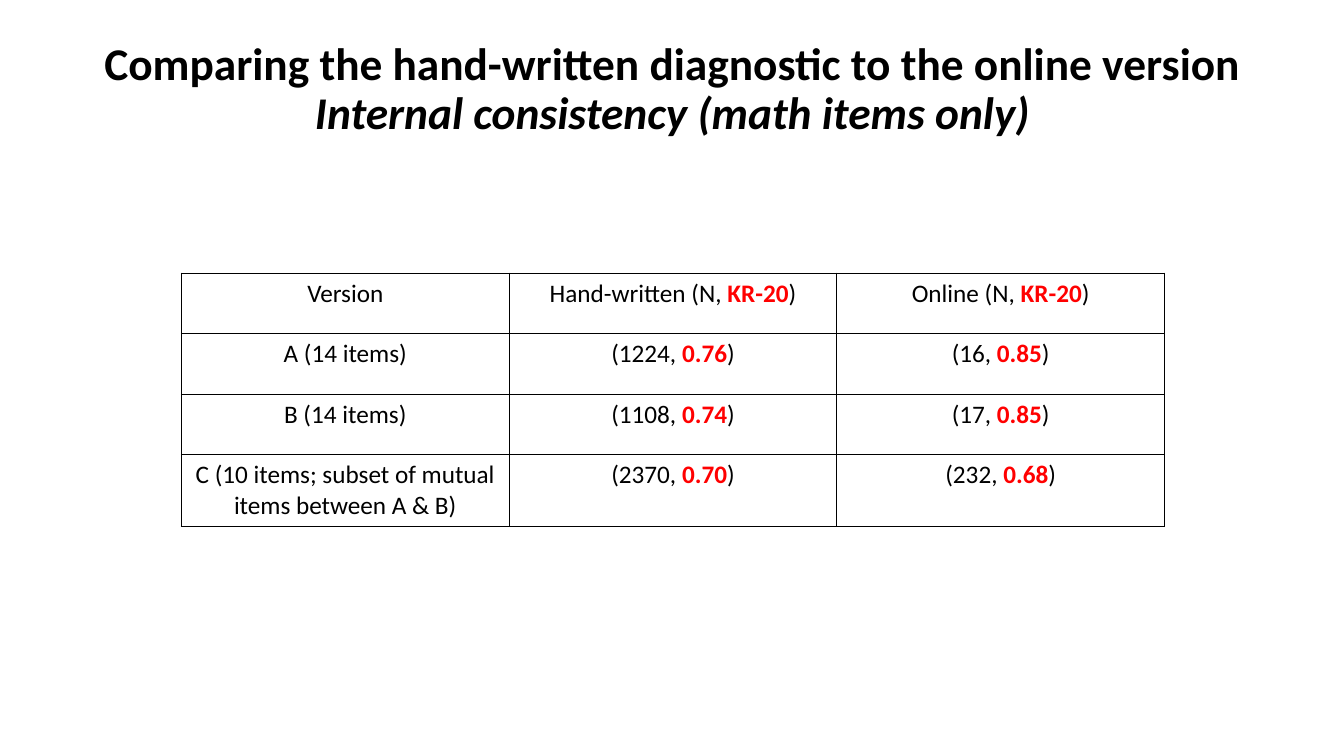
from dataclasses import dataclass

from lxml import etree
from pptx import Presentation
from pptx import util as u
from pptx.dml import color
from pptx.enum import text
from pptx.oxml import ns

WIDTH, HEIGHT = u.Inches(13.33), u.Inches(7.5)


@dataclass(frozen=True)
class Theme:
    font: str = "Calibri"
    ink: str = "000000"
    accent: str = "FF0000"
    paper: str = "FFFFFF"
    title_size: float = 32.4
    table_size: float = 18
    border: float = 1


THEME = Theme()

TITLE_LINES = [
    ("Comparing the hand-written diagnostic to the online version", False),
    ("Internal consistency (math items only)", True),
]
# Version, then (lead, highlighted KR-20) for hand-written and online
CONSISTENCY = [
    ("Version", ("Hand-written (N, ", "KR-20"), ("Online (N, ", "KR-20")),
    ("A (14 items)", ("(1224, ", "0.76"), ("(16, ", "0.85")),
    ("B (14 items)", ("(1108, ", "0.74"), ("(17, ", "0.85")),
    ("C (10 items; subset of mutual items between A & B)",
     ("(2370, ", "0.70"), ("(232, ", "0.68")),
]


def place(shape, left, top, width, height):
    """Position a shape in inches."""
    box = {"left": left, "top": top, "width": width, "height": height}
    for name, value in box.items():
        setattr(shape, name, u.Inches(value))


def add_run(paragraph, words, size, ink=THEME.ink, bold=False, italic=False):
    run = paragraph.add_run()
    run.text = words
    formats = {"name": THEME.font, "size": u.Pt(size), "bold": bold, "italic": italic}
    for name, value in formats.items():
        setattr(run.font, name, value)
    run.font.color.rgb = color.RGBColor.from_string(ink)


def fill_title(slide):
    title = slide.shapes.title
    place(title, 0.92, 0.17, 11.5, 1.45)
    frame = title.text_frame
    formats = {"word_wrap": True, "auto_size": text.MSO_AUTO_SIZE.NONE,
               "vertical_anchor": text.MSO_ANCHOR.MIDDLE}
    for name, value in formats.items():
        setattr(frame, name, value)
    paragraph = frame.paragraphs[0]
    paragraph.alignment = text.PP_ALIGN.CENTER
    paragraph.line_spacing = 0.9
    for index, (words, italic) in enumerate(TITLE_LINES):
        if index:
            paragraph.add_line_break()
        add_run(paragraph, words, THEME.title_size, bold=True, italic=italic)


def add_borders(cell):
    """Draw all four cell edges, ahead of the fill as the schema requires."""
    properties = cell._tc.get_or_add_tcPr()
    for index, edge in enumerate(("a:lnL", "a:lnR", "a:lnT", "a:lnB")):
        line = etree.Element(ns.qn(edge), w=str(u.Pt(THEME.border)))
        fill = etree.SubElement(line, ns.qn("a:solidFill"))
        etree.SubElement(fill, ns.qn("a:srgbClr"), val=THEME.ink)
        properties.insert(index, line)


def fill_cell(cell, content):
    cell.fill.solid()
    cell.fill.fore_color.rgb = color.RGBColor.from_string(THEME.paper)
    add_borders(cell)
    paragraph = cell.text_frame.paragraphs[0]
    paragraph.alignment = text.PP_ALIGN.CENTER
    if isinstance(content, str):
        add_run(paragraph, content, THEME.table_size)
        return
    lead, coefficient = content
    add_run(paragraph, lead, THEME.table_size)
    add_run(paragraph, coefficient, THEME.table_size, THEME.accent, bold=True)
    add_run(paragraph, ")", THEME.table_size)


def add_consistency_table(slide):
    rows, columns = len(CONSISTENCY), len(CONSISTENCY[0])
    column_width, row_height = u.Inches(3.25), u.Inches(0.6)
    table = slide.shapes.add_table(
        rows, columns, u.Inches(1.8), u.Inches(2.71),
        columns * column_width, rows * row_height).table
    for name in ("first_row", "horz_banding"):
        setattr(table, name, False)
    for row, contents in enumerate(CONSISTENCY):
        for column, content in enumerate(contents):
            fill_cell(table.cell(row, column), content)


def main():
    presentation = Presentation()
    presentation.slide_width, presentation.slide_height = WIDTH, HEIGHT
    # Title Only layout
    slide = presentation.slides.add_slide(presentation.slide_layouts[5])
    fill_title(slide)
    add_consistency_table(slide)
    presentation.save("out.pptx")


if __name__ == "__main__":
    main()
